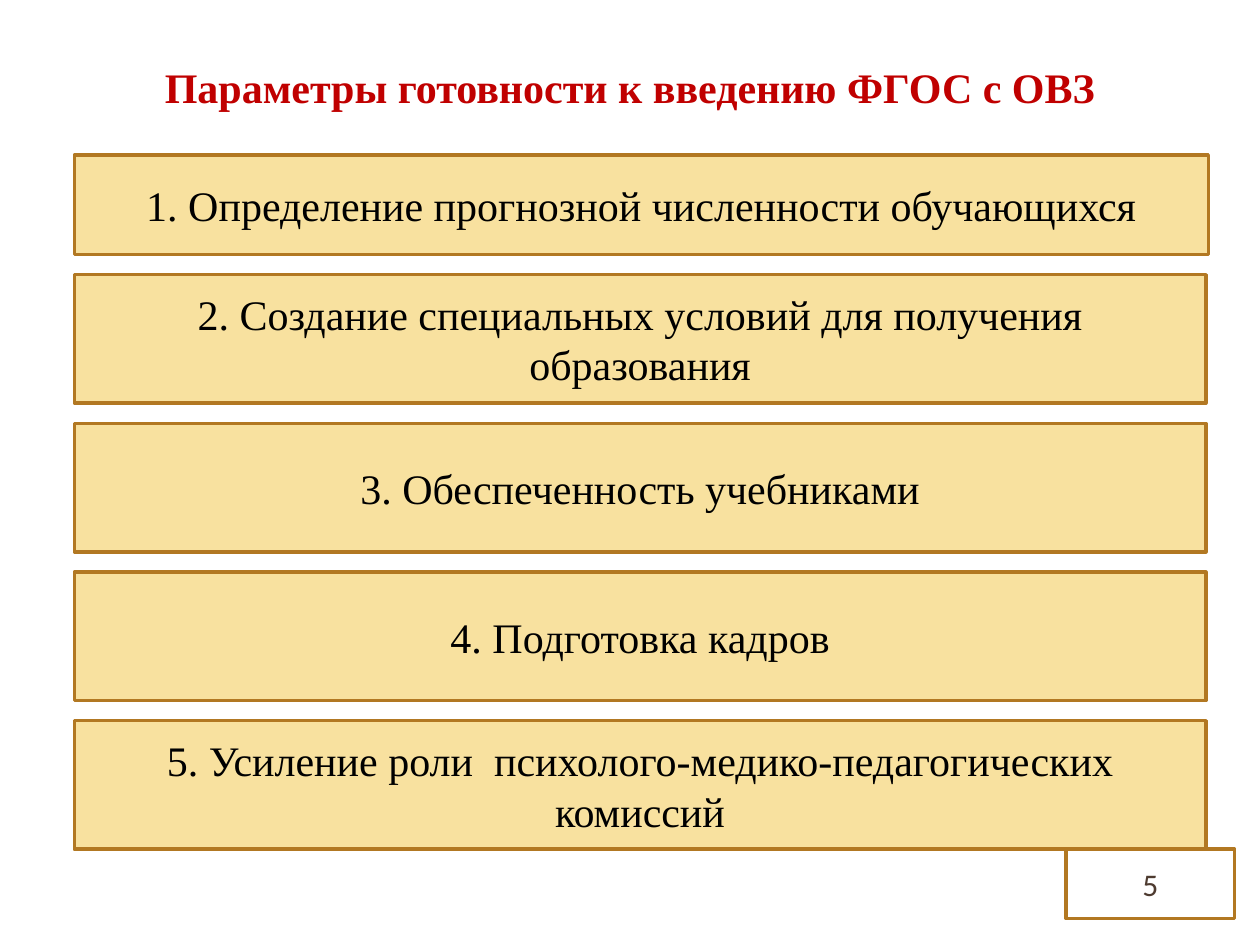
from pptx import Presentation
from pptx import util as u
from pptx.dml.color import RGBColor
from pptx.enum import shapes, text

COLORS = {
    "title": "C00000",
    "bar": "F8E19F",
    "border": "B27822",
    "ink": "000000",
    "page": "FFFFFF",
    "number": "4E3B30",
}
SERIF = "Times New Roman"
TITLE = {"name": SERIF, "size": u.Pt(24), "bold": True}
ITEM = {"name": SERIF, "size": u.Pt(24)}
NUMBER = {"name": "Calibri", "size": u.Pt(18)}


class Deck:
    """Holds the style and the current slide; the grid has 100 columns and 75 rows."""

    COLUMNS, ROWS = 100, 75

    def __init__(self):
        self.prs = Presentation()
        self.prs.slide_width, self.prs.slide_height = u.Inches(10), u.Inches(7.5)
        self.slide = self.prs.slides.add_slide(self.prs.slide_layouts[6])

    def place(self, left, top, width, height):
        column = self.prs.slide_width / self.COLUMNS
        row = self.prs.slide_height / self.ROWS
        return [round(v) for v in (left * column, top * row, width * column, height * row)]

    def set_wording(self, holder, wording, style, color):
        frame = holder.text_frame
        frame.word_wrap = True
        frame.vertical_anchor = text.MSO_ANCHOR.MIDDLE
        line = frame.paragraphs[0]
        line.alignment = text.PP_ALIGN.CENTER
        run = line.add_run()
        run.text = wording
        for key, value in style.items():
            setattr(run.font, key, value)
        run.font.color.rgb = RGBColor.from_string(COLORS[color])

    def label(self, area, wording, style, color):
        holder = self.slide.shapes.add_textbox(*self.place(*area))
        self.set_wording(holder, wording, style, color)

    def box(self, area, wording, style, color, fill):
        panel = self.slide.shapes.add_shape(shapes.MSO_SHAPE.RECTANGLE, *self.place(*area))
        panel.shadow.inherit = False
        panel.fill.solid()
        panel.fill.fore_color.rgb = RGBColor.from_string(COLORS[fill])
        panel.line.color.rgb = RGBColor.from_string(COLORS["border"])
        panel.line.width = u.Pt(2)
        self.set_wording(panel, wording, style, color)


def main():
    deck = Deck()

    # Heading
    deck.label((5, 3, 90, 7.7), "Параметры готовности к введению ФГОС с ОВЗ", TITLE, "title")

    # Readiness parameters: a shorter, wider first bar, then equal bars
    left, first_top, bar_height, pitch = 5.9, 21.8, 10.2, 11.8
    deck.box((left, 12.3, 90, 7.9), "1. Определение прогнозной численности обучающихся",
             ITEM, "ink", "bar")
    parameters = [
        "2. Создание специальных условий для получения образования",
        "3. Обеспеченность учебниками",
        "4. Подготовка кадров",
        "5. Усиление роли  психолого-медико-педагогических комиссий",
    ]
    for index, parameter in enumerate(parameters):
        deck.box((left, first_top + index * pitch, 89.8, bar_height),
                 parameter, ITEM, "ink", "bar")

    # Page number, directly below the last bar
    deck.box((84.6, first_top + 3 * pitch + bar_height, 13.4, 5.5), "5",
             NUMBER, "number", "page")

    deck.prs.save("out.pptx")


if __name__ == "__main__":
    main()
